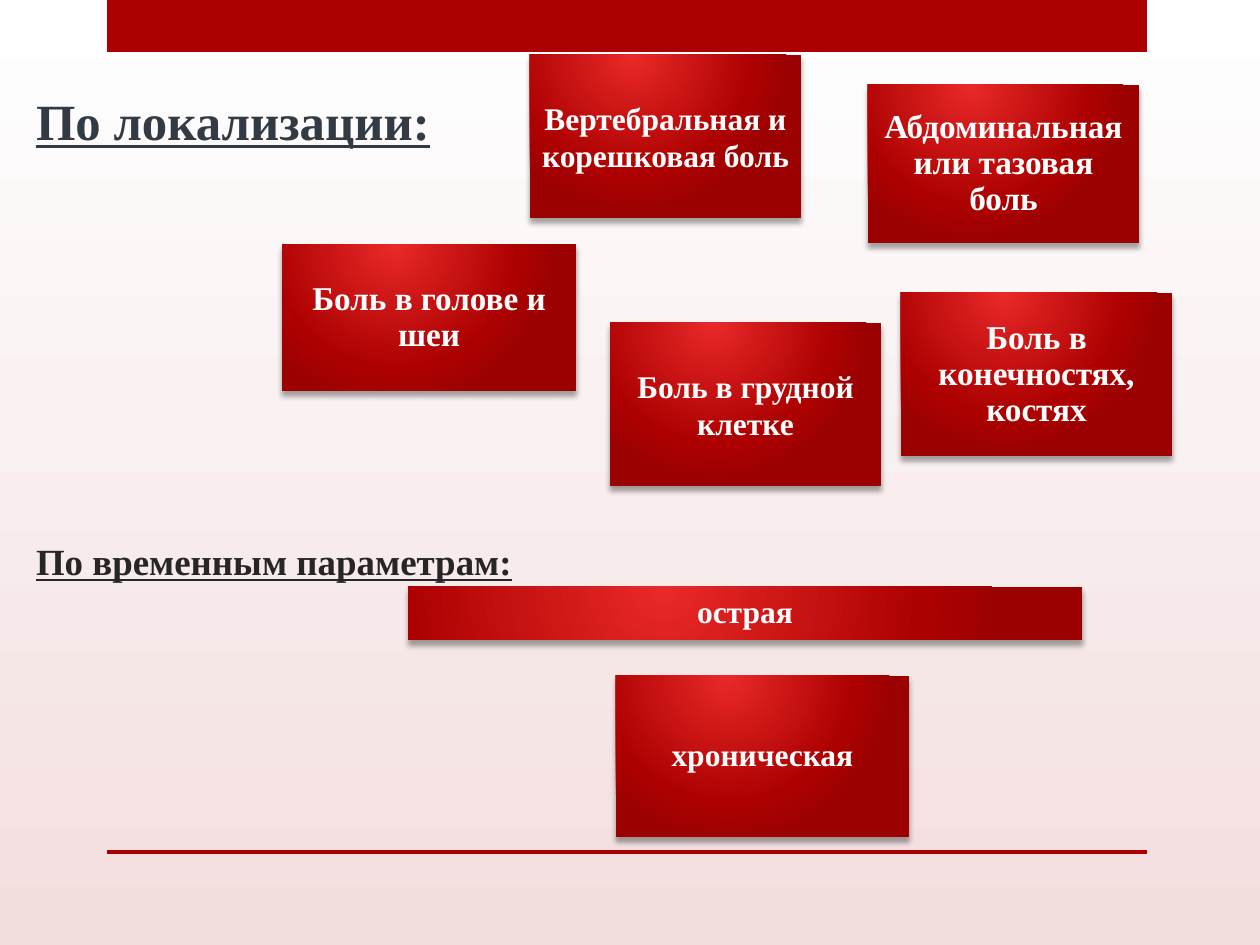
import pptx
import pptx.dml.color
import pptx.enum.shapes
import pptx.enum.text
import pptx.oxml
import pptx.oxml.ns
import pptx.util

PX = 914400 // 126
FONT = "Times New Roman"
ANCHOR = pptx.enum.text.MSO_ANCHOR
RECTANGLE = pptx.enum.shapes.MSO_SHAPE.RECTANGLE
NAMESPACE = pptx.oxml.ns.nsdecls("a")
CARD_FILL = f"""<a:gradFill {NAMESPACE} rotWithShape="1"><a:gsLst>
<a:gs pos="0"><a:srgbClr val="E92929"/></a:gs>
<a:gs pos="76000"><a:srgbClr val="AD0101"/></a:gs>
<a:gs pos="100000"><a:srgbClr val="9C0101"/></a:gs></a:gsLst>
<a:path path="circle"><a:fillToRect l="38000" t="-20000" r="62000" b="120000"/></a:path>
</a:gradFill>"""
CARD_SHADOW = f"""<a:outerShdw {NAMESPACE} blurRad="38100" dist="38100" dir="5400000"
 rotWithShape="0"><a:srgbClr val="000000"><a:alpha val="35000"/></a:srgbClr></a:outerShdw>"""


def color(value):
    return pptx.dml.color.RGBColor.from_string(value)


def add_rectangle(left, top, width, height):
    shape = slide.shapes.add_shape(RECTANGLE, left * PX, top * PX, width * PX, height * PX)
    shape.shadow.inherit = False
    shape.line.fill.background()
    return shape


presentation = pptx.Presentation()
presentation.slide_width = pptx.util.Inches(10)
presentation.slide_height = pptx.util.Inches(7.5)
slide = presentation.slides.add_slide(presentation.slide_layouts[1])
title = slide.shapes.title.element
title.getparent().remove(title)

# Background gradient, top to bottom
background = slide.background.fill
background.gradient()
background.gradient_angle = 270
for stop, value in zip(background.gradient_stops, ("FFFFFF", "F3DEDE")):
    stop.color.rgb = color(value)

# Red bars at top and bottom
for top, height in ((0, 52), (850, 4)):
    bar = add_rectangle(107, top, 1040, height)
    bar.fill.solid()
    bar.fill.fore_color.rgb = color("AD0101")

# Section headings
body = slide.placeholders[1]
body.left, body.top, body.width, body.height = 25 * PX, 84 * PX, 848 * PX, 786 * PX
text_frame = body.text_frame
text_frame.auto_size = pptx.enum.text.MSO_AUTO_SIZE.NONE
text_frame.vertical_anchor = ANCHOR.TOP
text_frame.margin_left = text_frame.margin_right = 6 * PX
text_frame.margin_top = text_frame.margin_bottom = 6 * PX
text_frame.text = "По локализации:\nПо временным параметрам:"
heading_styles = ((29, "323B44", 0), (21.1, "262626", 221.5))
for paragraph, (size, value, space) in zip(text_frame.paragraphs, heading_styles):
    properties = paragraph._p.get_or_add_pPr()
    properties.set("marL", "0")
    properties.set("indent", str(5 * PX))
    properties.append(pptx.oxml.parse_xml(f"<a:buNone {NAMESPACE}/>"))
    paragraph.space_before = pptx.util.Pt(space)
    font = paragraph.runs[0].font
    font.name, font.size = FONT, pptx.util.Pt(size)
    font.bold = font.underline = True
    font.color.rgb = color(value)

# Pain type cards: text, left, top, width, height, size, line spacing
cards = [
    ("Вертебральная и корешковая боль", 530, 55, 271, 163, 18, 1),
    ("Боль в грудной клетке", 610, 323, 271, 163, 18, 1),
    ("Боль в голове и шеи", 282, 244, 294, 147, 19, 0.9),
    ("Боль в конечностях, костях", 901, 293, 271, 163, 19, 0.9),
    ("Абдоминальная или тазовая боль", 868, 85, 271, 158, 19, 0.9),
    ("острая", 408, 587, 674, 53, 18, 0.9),
    ("хроническая", 616, 676, 293, 161, 18, 0.9),
]
for text, left, top, width, height, size, spacing in cards:
    card = add_rectangle(left, top, width, height)
    card.fill.gradient()
    shape_properties = card.element.spPr
    gradient = shape_properties.find(pptx.oxml.ns.qn("a:gradFill"))
    shape_properties.replace(gradient, pptx.oxml.parse_xml(CARD_FILL))
    effects = shape_properties.find(pptx.oxml.ns.qn("a:effectLst"))
    effects.append(pptx.oxml.parse_xml(CARD_SHADOW))

    text_frame = card.text_frame
    text_frame.word_wrap = True
    text_frame.vertical_anchor = ANCHOR.MIDDLE
    text_frame.margin_left = text_frame.margin_right = 9 * PX
    text_frame.margin_top = text_frame.margin_bottom = 9 * PX
    text_frame.text = text
    paragraph = text_frame.paragraphs[0]
    paragraph.alignment = pptx.enum.text.PP_ALIGN.CENTER
    paragraph.line_spacing = spacing
    font = paragraph.runs[0].font
    font.name, font.size, font.bold = FONT, pptx.util.Pt(size), True
    font.color.rgb = color("FFFFFF")

presentation.save("out.pptx")
